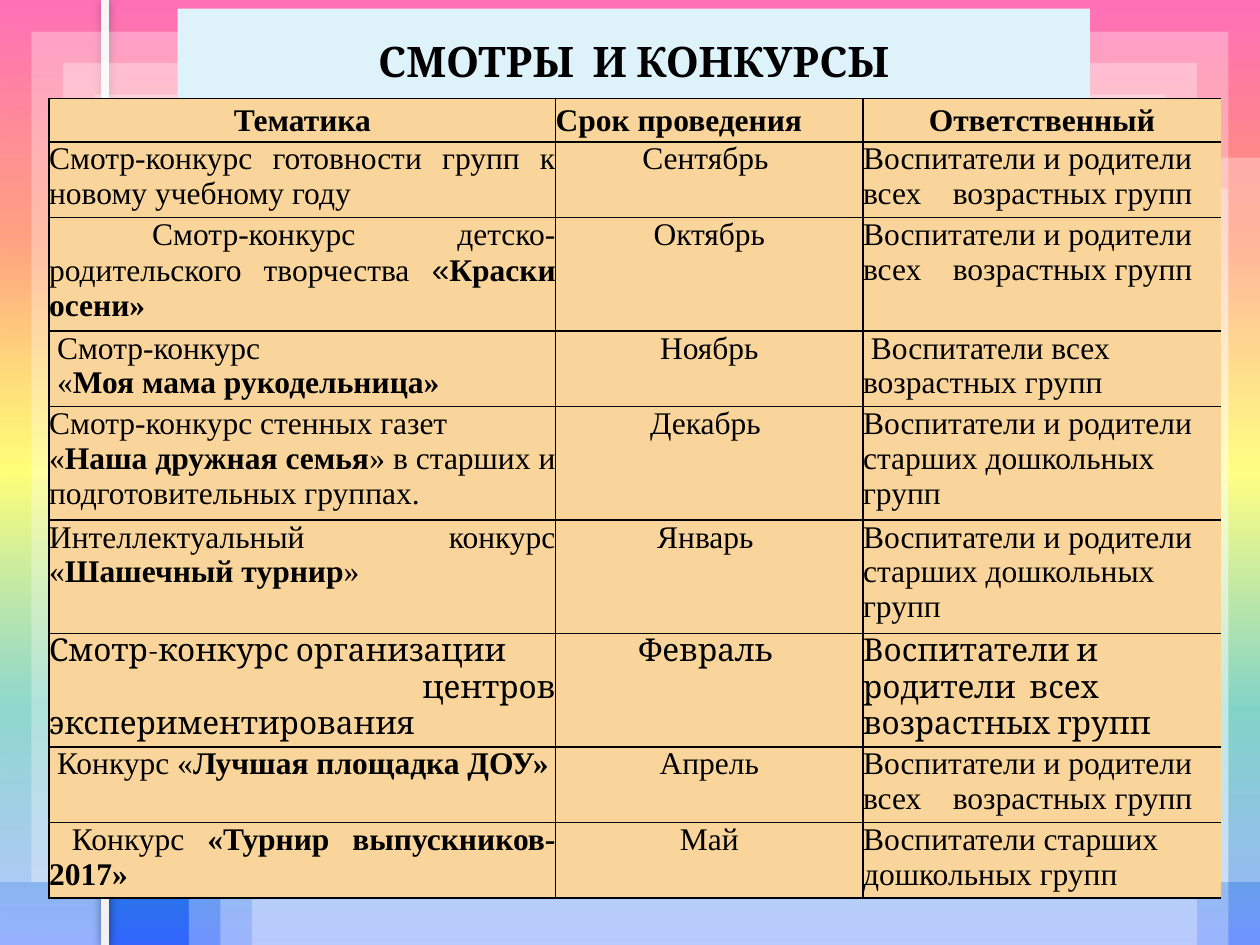
from lxml.etree import SubElement
from pptx import Presentation
from pptx.dml.color import RGBColor
from pptx.enum.shapes import MSO_CONNECTOR, MSO_SHAPE
from pptx.enum.text import MSO_ANCHOR, MSO_AUTO_SIZE, PP_ALIGN
from pptx.oxml.ns import qn
from pptx.util import Inches, Pt


def hue(fill, code, alpha=100):
    fill.solid()
    fill.fore_color.rgb = RGBColor.from_string(code)
    if alpha < 100:
        tint = fill.fore_color._xFill.find(qn("a:srgbClr"))
        SubElement(tint, qn("a:alpha"), val=str(alpha * 1000))


def blend(root, stops, angle):
    grad = root.find(".//" + qn("a:gradFill"))
    for part in list(grad):
        grad.remove(part)
    stack = SubElement(grad, qn("a:gsLst"))
    for pos, code, alpha in stops:
        stop = SubElement(stack, qn("a:gs"), pos=str(pos * 1000))
        tint = SubElement(stop, qn("a:srgbClr"), val=code)
        SubElement(tint, qn("a:alpha"), val=str(alpha * 1000))
    SubElement(grad, qn("a:lin"), ang=str(angle * 60000), scaled="0")


deck = Presentation()
deck.slide_width, deck.slide_height = Inches(10), Inches(7.5)
slide = deck.slides.add_slide(deck.slide_layouts[5])
shapes = slide.shapes
unit = Inches(0.25)

slide.background.fill.gradient()
tones = ["FF3399", "FF6633", "FFFF00", "01A78F", "3366FF"]
blend(slide.element, [(25 * i, tone, 100) for i, tone in enumerate(tones)], 90)

strip = shapes.add_shape(MSO_SHAPE.RECTANGLE, 0, 0, Inches(0.85), deck.slide_height)
strip.shadow.inherit = False
strip.fill.gradient()
blend(strip._element, [(0, "FFFFFF", 50), (100, "FFFFFF", 0)], 270)
strip.line.fill.background()

rail = shapes.add_connector(
    MSO_CONNECTOR.STRAIGHT, Inches(0.83), 0, Inches(0.83), deck.slide_height)
hue(rail.line.fill, "F1F1F1")
rail.line.width = Pt(4.5)
effect = SubElement(rail._element.spPr, qn("a:effectLst"))
shade = SubElement(effect, qn("a:outerShdw"), blurRad=str(Pt(5)), dist="0", dir="0")
tint = SubElement(shade, qn("a:srgbClr"), val="000000")
SubElement(tint, qn("a:alpha"), val="40000")

for left, top, wide, high, count in [(6, 5, 34, 25, 3), (0, 0, 40, 28, 6)]:
    for i in range(count):
        pane = shapes.add_shape(
            MSO_SHAPE.RECTANGLE, (left + i) * unit, (top + i) * unit,
            (wide - 2 * i) * unit, (high - i) * unit)
        pane.shadow.inherit = False
        hue(pane.fill, "FFFFFF", 30)
        pane.line.fill.background()

title = shapes.title
shapes._spTree.append(title._element)
title.left, title.top = Inches(1.41), Inches(0.23)
title.width, title.height = Inches(7.24), Inches(0.51)
hue(title.fill, "DEF2FA")
title.text = "СМОТРЫ  И КОНКУРСЫ"
frame = title.text_frame
frame.auto_size = MSO_AUTO_SIZE.SHAPE_TO_FIT_TEXT
frame.vertical_anchor = MSO_ANCHOR.MIDDLE
head = frame.paragraphs[0]
head.alignment = PP_ALIGN.CENTER
head.font.name, head.font.size, head.font.bold = "Cambria", Pt(24), True
hue(head.font.fill, "000000")

aligns = {"l": PP_ALIGN.LEFT, "c": PP_ALIGN.CENTER, "j": PP_ALIGN.JUSTIFY}
every = "Воспитатели и родители  всех    возрастных групп"
older = "Воспитатели и родители  старших дошкольных групп"
rows = [
    (0.34, "c", "*Тематика", "*Срок проведения", "*Ответственный"),
    (0.6, "j", "Смотр-конкурс готовности групп к новому учебному году",
     "Сентябрь ", every),
    (0.9, "j", "^ |Смотр-конкурс детско-родительского творчества |^«|*Краски осени»",
     "Октябрь", every),
    (0.6, "ll", " Смотр-конкурс\n «|*Моя мама рукодельница»",
     "Ноябрь", " Воспитатели всех         возрастных групп"),
    (0.9, "jj", "Смотр-конкурс стенных газет\n"
     "«|*Наша дружная семья|» в старших и подготовительных группах.",
     "Декабрь ", older),
    (0.9, "j", "Интеллектуальный конкурс «|*Шашечный турнир|»", "Январь ", older),
    (0.9, "lj", "Смотр-конкурс организации\n   центров экспериментирования",
     "Февраль ", every),
    (0.6, "l", " Конкурс «|*Лучшая площадка ДОУ»", "Апрель", every),
    (0.6, "j", " Конкурс |*«Турнир выпускников- 2017»",
     "Май", "Воспитатели старших дошкольных групп"),
]
table = shapes.add_table(
    len(rows), 3, Inches(0.39), Inches(0.78), Inches(9.3),
    Inches(sum(row[0] for row in rows))).table
for col, wide in zip(table.columns, [4.02, 2.44, 2.84]):
    col.width = Inches(wide)

for r, (high, first, *texts) in enumerate(rows):
    table.rows[r].height = Inches(high)
    modes = [first, "c", "l"] if r else ["c", "l", "c"]
    for c, (text, mode) in enumerate(zip(texts, modes)):
        cell = table.cell(r, c)
        cell.margin_left = cell.margin_right = cell.margin_top = cell.margin_bottom = 0
        props = cell._tc.get_or_add_tcPr()
        for side in ["lnL", "lnR", "lnT", "lnB"]:
            edge = SubElement(props, qn("a:" + side), w=str(Pt(1)))
            if (c, side) == (2, "lnR"):
                SubElement(edge, qn("a:noFill"))
            else:
                ink = SubElement(edge, qn("a:solidFill"))
                SubElement(ink, qn("a:srgbClr"), val="000000")
        hue(cell.fill, "F9D59B")
        body = cell.text_frame
        for i, (line, key) in enumerate(zip(text.split("\n"), mode)):
            para = body.add_paragraph() if i else body.paragraphs[0]
            para.alignment = aligns[key]
            para.line_spacing = 1.0 if r else 1.15
            para.font.name = "Cambria" if r == 6 else "Times New Roman"
            para.font.size = Pt(18)
            hue(para.font.fill, "000000")
            for piece in line.split("|"):
                run = para.add_run()
                run.text = piece.lstrip("*^")
                run.font.bold = piece.startswith("*")
                if piece.startswith("^"):
                    run.font.name = "Arial"

deck.save("out.pptx")
